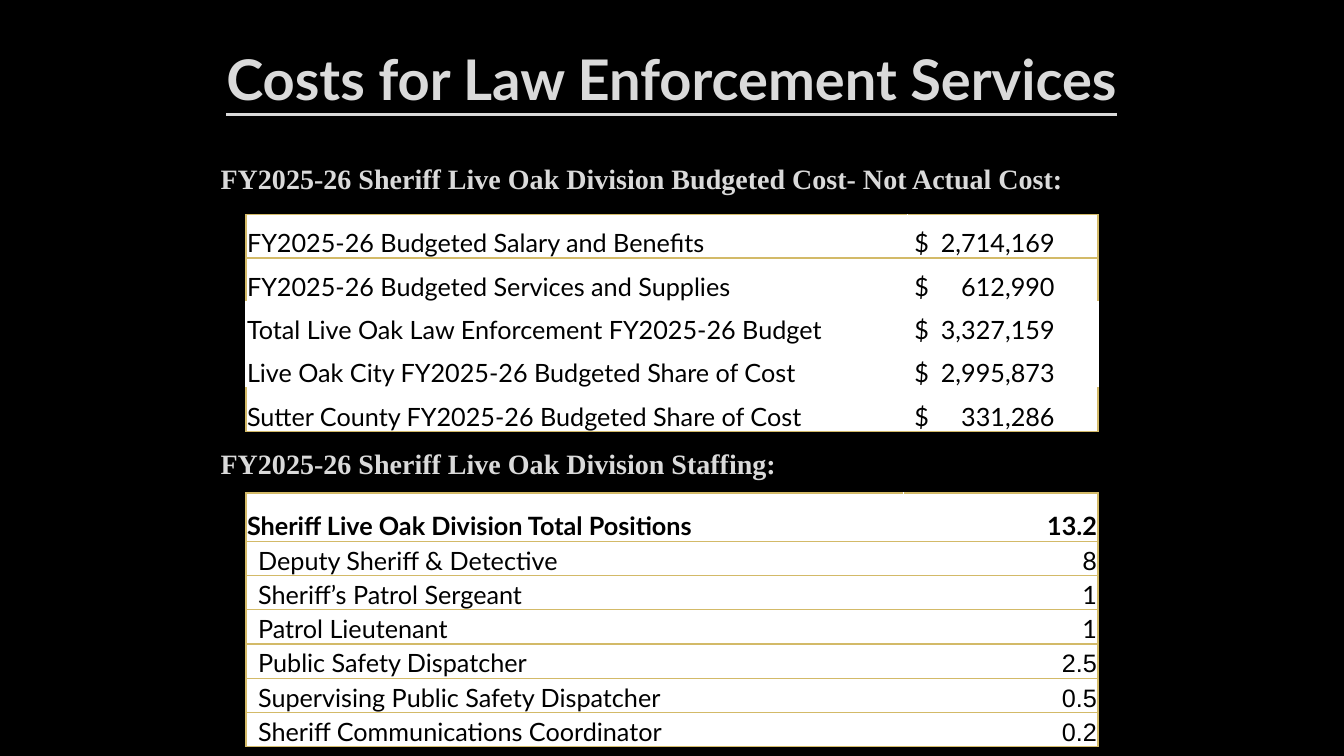
from dataclasses import dataclass
from lxml.etree import SubElement
from pptx import Presentation
from pptx.dml.color import RGBColor
from pptx.enum.text import MSO_ANCHOR, PP_ALIGN
from pptx.oxml.ns import qn
from pptx.util import Inches, Pt

TITLE = "Costs for Law Enforcement Services"
COST_HEADING = "FY2025-26 Sheriff Live Oak Division Budgeted Cost- Not Actual Cost:"
STAFF_HEADING = "FY2025-26 Sheriff Live Oak Division Staffing:"
COSTS = [
    ("FY2025-26 Budgeted Salary and Benefits", "2,714,169"),
    ("FY2025-26 Budgeted Services and Supplies", "612,990"),
    ("Total Live Oak Law Enforcement FY2025-26 Budget", "3,327,159"),
    ("Live Oak City FY2025-26 Budgeted Share of Cost", "2,995,873"),
    ("Sutter County FY2025-26 Budgeted Share of Cost", "331,286"),
]
STAFF = [
    ("Sheriff Live Oak Division Total Positions", "13.2"),
    ("Deputy Sheriff & Detective", "8"),
    ("Sheriff’s Patrol Sergeant", "1"),
    ("Patrol Lieutenant", "1"),
    ("Public Safety Dispatcher", "2.5"),
    ("Supervising Public Safety Dispatcher", "0.5"),
    ("Sheriff Communications Coordinator", "0.2"),
]


@dataclass(frozen=True)
class Theme:
    back: str = "000000"
    heading: str = "DADADA"
    paper: str = "FFFFFF"
    ink: str = "000000"
    rule: str = "D3BA68"
    sans: str = "Lato"
    serif: str = "Times New Roman"
    digits: str = "Arial"
    title_size: int = 40
    heading_size: int = 20
    cell_size: int = 18


THEME = Theme()
TABLE_LEFT, TABLE_WIDTH = 2.44, 8.45
CELL_INSET, STAFF_INDENT, DOLLAR_INDENT = 0.01, 0.12, 0.07
AMOUNT_STOP = 1.39


def style(para, font, size, color, bold=False, underline=False):
    for span in para.runs:
        span.font.name = font
        span.font.size = Pt(size)
        span.font.color.rgb = RGBColor.from_string(color)
        span.font.bold = bold
        span.font.underline = underline


def add_heading(page, text, left, top, width, height, font, size, align, underline=False):
    box = page.shapes.add_textbox(*map(Inches, (left, top, width, height)))
    frame = box.text_frame
    frame.word_wrap = True
    frame.vertical_anchor = MSO_ANCHOR.MIDDLE
    frame.text = text
    para = frame.paragraphs[0]
    para.alignment = align
    style(para, font, size, THEME.heading, True, underline)


def set_borders(cell, colors):
    properties = cell._tc.get_or_add_tcPr()
    for position, (side, color) in enumerate(colors.items()):
        line = properties.makeelement(qn(f"a:ln{side}"), {"w": str(Pt(1))})
        fill = SubElement(line, qn("a:solidFill"))
        SubElement(fill, qn("a:srgbClr"), val=color)
        properties.insert(position, line)


def fill_cell(cell, text, font, bold, inset, align, borders):
    cell.fill.solid()
    cell.fill.fore_color.rgb = RGBColor.from_string(THEME.paper)
    cell.vertical_anchor = MSO_ANCHOR.BOTTOM
    cell.margin_left = Inches(inset)
    cell.margin_top = cell.margin_right = Inches(CELL_INSET)
    cell.margin_bottom = 0
    cell.text_frame.text = text
    para = cell.text_frame.paragraphs[0]
    para.alignment = align
    style(para, font, THEME.cell_size, THEME.ink, bold)
    set_borders(cell, borders)
    return para


def add_grid(page, top, label_width, heights):
    frame = page.shapes.add_table(
        len(heights), 2, *map(Inches, (TABLE_LEFT, top, TABLE_WIDTH, sum(heights))))
    table = frame.table
    table.first_row = table.horz_banding = False
    for column, width in zip(table.columns, (label_width, TABLE_WIDTH - label_width)):
        column.width = Inches(width)
    for row, height in zip(table.rows, heights):
        row.height = Inches(height)
    return table


def add_costs(page):
    table = add_grid(page, 2.13, 6.56, [0.43] * len(COSTS))
    ruled_edges = {0, 1, len(COSTS)}
    ruled_rows = {0, 1, len(COSTS) - 1}
    for index, (label, amount) in enumerate(COSTS):
        side = THEME.rule if index in ruled_rows else THEME.paper
        above, below = (THEME.rule if edge in ruled_edges else THEME.paper
                        for edge in (index, index + 1))
        fill_cell(table.cell(index, 0), label, THEME.sans, False, CELL_INSET, PP_ALIGN.LEFT,
                  {"L": side, "R": THEME.paper, "T": above, "B": below})
        para = fill_cell(table.cell(index, 1), f"$\t{amount}", THEME.sans, False,
                         DOLLAR_INDENT, PP_ALIGN.LEFT,
                         {"L": THEME.paper, "R": side, "T": above, "B": below})
        stops = SubElement(para._p.get_or_add_pPr(), qn("a:tabLst"))
        SubElement(stops, qn("a:tab"), pos=str(Inches(AMOUNT_STOP)), algn="r")


def add_staff(page):
    table = add_grid(page, 4.89, 6.52, [0.48] + [0.34] * (len(STAFF) - 1))
    for index, (label, count) in enumerate(STAFF):
        total = index == 0
        edges = {"T": THEME.rule, "B": THEME.rule}
        fill_cell(table.cell(index, 0), label, THEME.sans, total,
                  CELL_INSET if total else STAFF_INDENT, PP_ALIGN.LEFT,
                  {"L": THEME.rule, "R": THEME.paper, **edges})
        font = THEME.digits if count.startswith(("0.", "2.")) else THEME.sans
        fill_cell(table.cell(index, 1), count, font, total, CELL_INSET, PP_ALIGN.RIGHT,
                  {"L": THEME.paper, "R": THEME.rule, **edges})


def main():
    deck = Presentation()
    deck.slide_width, deck.slide_height = Inches(13.33), Inches(7.5)
    page = deck.slides.add_slide(deck.slide_layouts[6])
    page.background.fill.solid()
    page.background.fill.fore_color.rgb = RGBColor.from_string(THEME.back)
    add_heading(page, TITLE, 1, 0.24, 11.32, 1.06, THEME.sans, THEME.title_size,
                PP_ALIGN.CENTER, True)
    for text, top in ((COST_HEADING, 1.57), (STAFF_HEADING, 4.4)):
        add_heading(page, text, 2.09, top, 10.5, 0.4, THEME.serif, THEME.heading_size,
                    PP_ALIGN.LEFT)
    add_costs(page)
    add_staff(page)
    deck.save("out.pptx")


if __name__ == "__main__":
    main()
